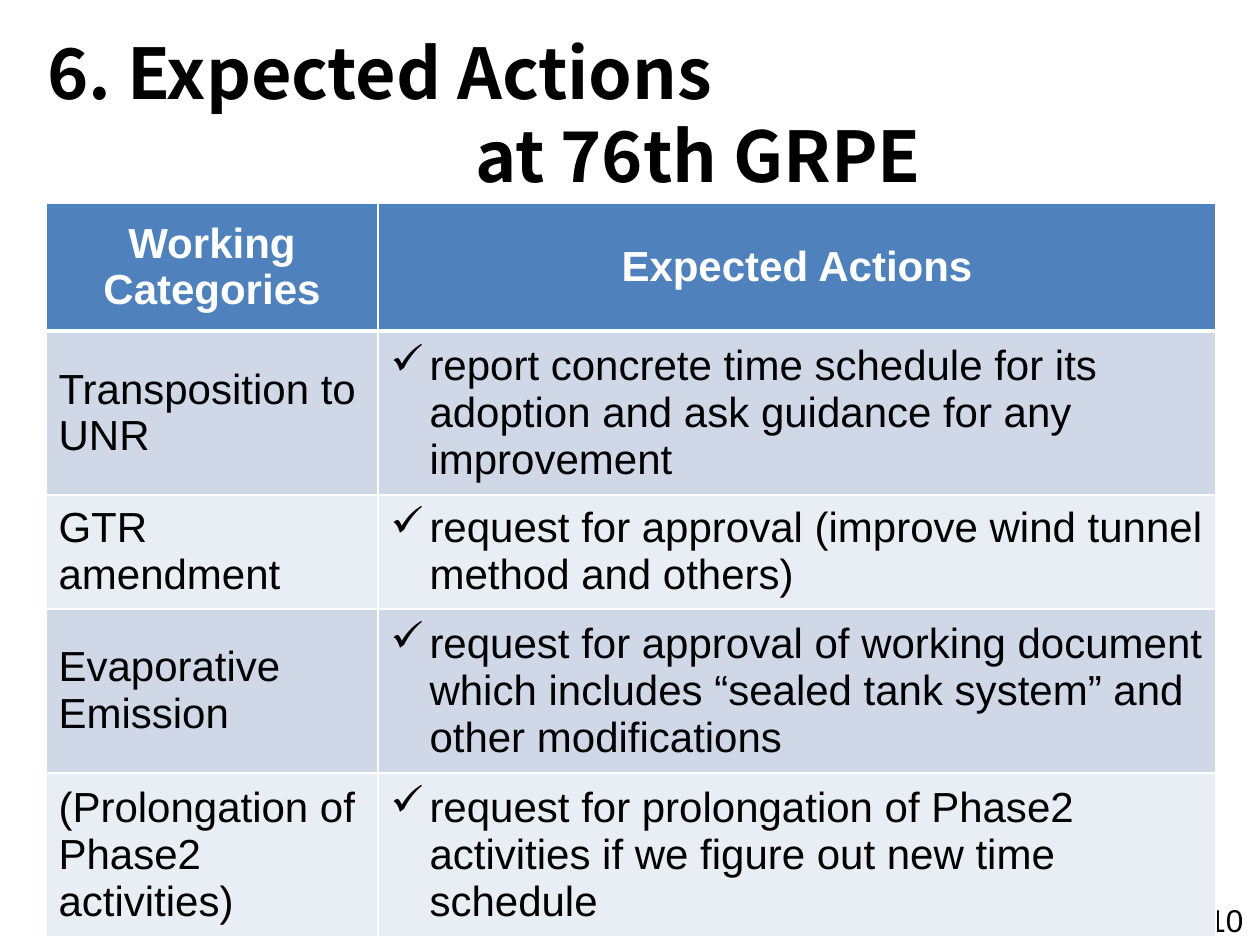
from lxml import etree
from pptx import Presentation
from pptx.dml.color import RGBColor
from pptx.enum.text import MSO_ANCHOR, PP_ALIGN
from pptx.oxml.ns import qn
from pptx.util import Emu, Pt

MIDDLE, TOP = MSO_ANCHOR.MIDDLE, MSO_ANCHOR.TOP
CENTER, LEFT = PP_ALIGN.CENTER, PP_ALIGN.LEFT
THEME = {
    "head_font": "Noto Sans CJK JP", "body_font": "Arial",
    "title": 40, "title_line": 48, "table": 24, "number": 18,
    "text": "000000", "header_text": "FFFFFF", "header": "4F81BD",
    "bands": ("D0D8E8", "E9EDF4"), "border": "FFFFFF",
}
ROWS = [
    ("Working\nCategories", "Expected Actions"),
    ("Transposition to UNR",
     "report concrete time schedule for its adoption and ask guidance for any improvement"),
    ("GTR\namendment",
     "request for approval (improve wind tunnel method and others)"),
    ("Evaporative Emission",
     "request for approval of working document which includes “sealed tank system” "
     "and other modifications"),
    ("(Prolongation of Phase2 activities)",
     "request for prolongation of Phase2 activities if we figure out new time schedule"),
]
COL_WIDTHS = (332, 838)
ROW_HEIGHTS = (128, 163, 114, 164, 163)
BULLET_INDENT = 39
TITLE_INDENT = 428


def px(n):
    return Emu(round(n * 914400 / 126))


def format_text(tf, font, size, color, bold=False, align=LEFT):
    for p in tf.paragraphs:
        p.alignment = align
        for r in p.runs:
            r.font.name = font
            r.font.size = Pt(size)
            r.font.bold = bold
            r.font.color.rgb = RGBColor.from_string(color)
            ea = etree.SubElement(r.font._element, qn("a:ea"))
            ea.set("typeface", font)


prs = Presentation()
prs.slide_width, prs.slide_height = px(1260), px(945)
s = prs.slides.add_slide(prs.slide_layouts[6])

# Slide number, behind the table
tf = s.shapes.add_textbox(px(1196), px(895), px(64), px(50)).text_frame
tf.text = "10"
tf.word_wrap = False
tf.vertical_anchor = TOP
format_text(tf, THEME["body_font"], THEME["number"], THEME["text"])

# Title in two lines, the second one indented
tf = s.shapes.add_textbox(px(35), px(14), px(1183), px(198)).text_frame
tf.text = "6. Expected Actions\nat 76th GRPE"
tf.word_wrap = True
tf.vertical_anchor = MIDDLE
format_text(tf, THEME["head_font"], THEME["title"], THEME["text"], bold=True)
for p in tf.paragraphs:
    p.line_spacing = Pt(THEME["title_line"])
tf.paragraphs[1]._p.get_or_add_pPr().set("marL", str(px(TITLE_INDENT)))

# Table of actions
table = s.shapes.add_table(len(ROWS), len(COL_WIDTHS), px(46), px(203),
                           px(sum(COL_WIDTHS)), px(sum(ROW_HEIGHTS))).table
for column, width in zip(table.columns, COL_WIDTHS):
    column.width = px(width)
for row, height in zip(table.rows, ROW_HEIGHTS):
    row.height = px(height)

for i, texts in enumerate(ROWS):
    header = i == 0
    for j, text in enumerate(texts):
        cell = table.cell(i, j)
        cell.text = text
        cell.vertical_anchor = MIDDLE
        format_text(cell.text_frame, THEME["body_font"], THEME["table"],
                    THEME["header_text" if header else "text"],
                    bold=header, align=CENTER if header else LEFT)

        tcPr = cell._tc.get_or_add_tcPr()
        for side in ("L", "R", "T", "B"):
            thick = (i, side) in ((0, "B"), (1, "T"))
            ln = etree.SubElement(tcPr, qn(f"a:ln{side}"), w=str(Pt(3 if thick else 1)))
            fill = etree.SubElement(ln, qn("a:solidFill"))
            etree.SubElement(fill, qn("a:srgbClr"), val=THEME["border"])
        cell.fill.solid()
        color = THEME["header"] if header else THEME["bands"][(i - 1) % 2]
        cell.fill.fore_color.rgb = RGBColor.from_string(color)

        if j == 1 and not header:
            pPr = cell.text_frame.paragraphs[0]._p.get_or_add_pPr()
            pPr.set("marL", str(px(BULLET_INDENT)))
            pPr.set("indent", str(px(-BULLET_INDENT)))
            etree.SubElement(pPr, qn("a:buChar"), char="✓")

prs.save("out.pptx")
